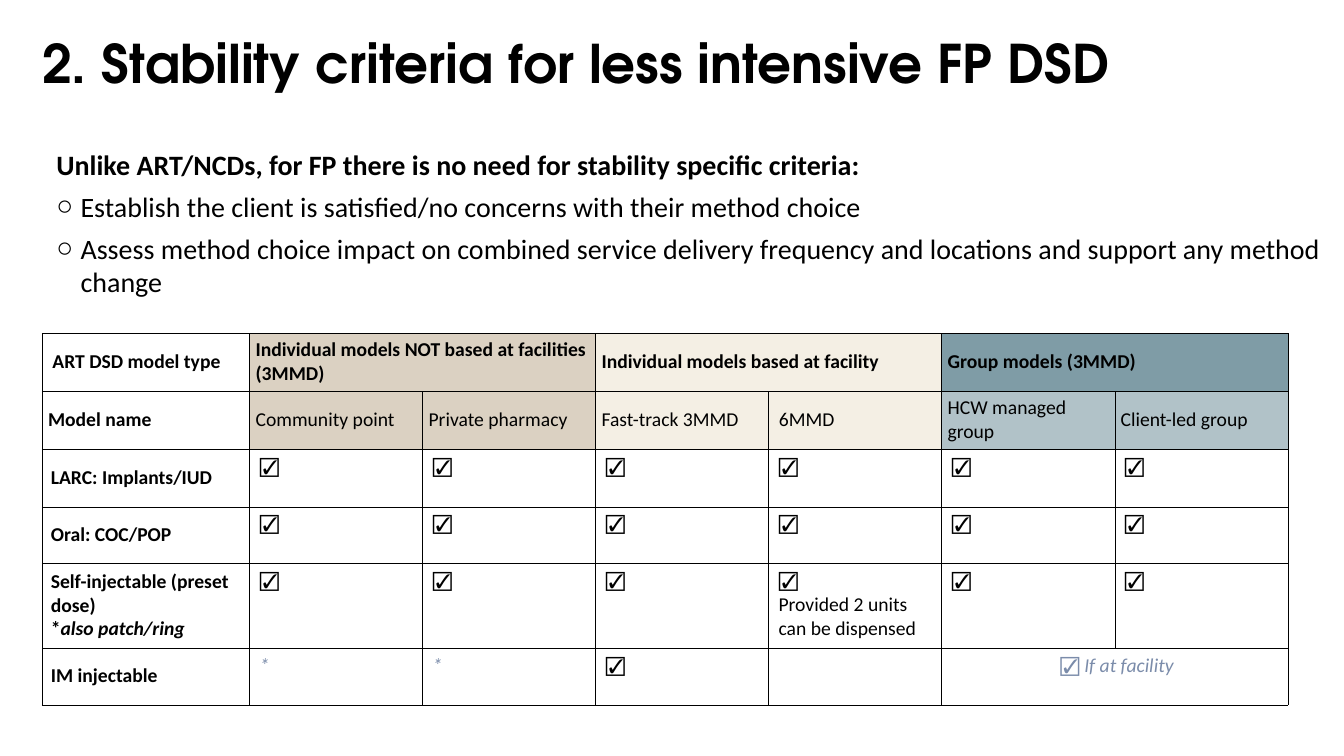
import dataclasses
import typing

import lxml.etree
import pptx
import pptx.dml.color
import pptx.enum.text
import pptx.oxml.ns
import pptx.util

Cm = pptx.util.Cm
Pt = pptx.util.Pt
ALIGN = pptx.enum.text.PP_ALIGN
ANCHOR = pptx.enum.text.MSO_ANCHOR

BLACK, WHITE, MUTED = "000000", "FFFFFF", "7B8CAA"
SAND, CREAM, TEAL, PALE_TEAL = "DBD1C2", "F4EFE4", "7F9CA6", "B1C2C8"
COLUMN_WIDTHS = [5.23] + [4.36] * 6
ROW_HEIGHTS = [1.46, 1.46, 1.46, 1.42, 2.14, 1.42]


@dataclasses.dataclass(frozen=True)
class Span:
    text: str
    bold: bool = False
    italic: bool = False
    color: str = BLACK
    size: float = 14
    font: str = "Calibri"


@dataclasses.dataclass(frozen=True)
class Entry:
    lines: tuple[tuple[Span, ...], ...] = ()
    fill: str = WHITE
    columns: int = 1
    left: float = 0.25
    top: float = 0.13
    anchor: typing.Any = ANCHOR.TOP
    align: typing.Any = ALIGN.LEFT


def rgb(color: str) -> pptx.dml.color.RGBColor:
    return pptx.dml.color.RGBColor.from_string(color)


def apply(target: typing.Any, values: dict[str, typing.Any]) -> None:
    for name, value in values.items():
        setattr(target, name, value)


def add_span(para: typing.Any, span: Span) -> None:
    run = para.add_run()
    run.text = span.text
    apply(run.font, {"name": span.font, "size": Pt(span.size),
                     "bold": span.bold, "italic": span.italic})
    run.font.color.rgb = rgb(span.color)


def add_lines(frame: typing.Any, lines: typing.Sequence[typing.Sequence[Span]],
              values: dict[str, typing.Any]) -> None:
    for index, line in enumerate(lines):
        para = frame.add_paragraph() if index else frame.paragraphs[0]
        apply(para, values)
        for span in line:
            add_span(para, span)


def place(box: typing.Any, left: float, top: float, width: float, height: float) -> None:
    apply(box, {"left": Cm(left), "top": Cm(top), "width": Cm(width), "height": Cm(height)})
    apply(box.text_frame, {"margin_left": 0, "margin_top": 0, "margin_right": 0,
                           "margin_bottom": 0, "word_wrap": True,
                           "vertical_anchor": ANCHOR.TOP,
                           "auto_size": pptx.enum.text.MSO_AUTO_SIZE.NONE})


def add_element(parent: typing.Any, tag: str, **attributes: str) -> typing.Any:
    return lxml.etree.SubElement(parent, pptx.oxml.ns.qn(tag), attributes)


def set_bullet(para: typing.Any, char: str, indent: float) -> None:
    properties = para._p.get_or_add_pPr()
    properties.set("marL", str(Cm(indent)))
    properties.set("indent", str(-Cm(indent)))
    if char:
        add_element(properties, "a:buChar", char=char)
    else:
        add_element(properties, "a:buNone")


def set_borders(cell: typing.Any) -> None:
    properties = cell._tc.get_or_add_tcPr()
    for side in ("a:lnL", "a:lnR", "a:lnT", "a:lnB"):
        line = add_element(properties, side, w=str(Pt(0.25)))
        add_element(add_element(line, "a:solidFill"), "a:srgbClr", val=BLACK)


def heading(text: str, fill: str = WHITE, columns: int = 1,
            bold: bool = True, left: float = 0.15) -> Entry:
    return Entry(((Span(text, bold),),), fill, columns, left, 0.1, ANCHOR.MIDDLE)


def method(*lines: tuple[Span, ...]) -> Entry:
    return Entry(lines, left=0.22, top=0.1, anchor=ANCHOR.MIDDLE)


def model(text: str, fill: str, left: float = 0.15) -> Entry:
    return heading(text, fill, bold=False, left=left)


CHECK = Entry(((Span("☑"),),))
CHECK_WITH_NOTE = Entry(CHECK.lines + ((Span("Provided 2 units can be dispensed"),),))
STAR = Entry(((Span("*", italic=True, color=MUTED),),))
AT_FACILITY = Entry(((Span("☑ ", color=MUTED),
                      Span("If at facility", italic=True, color=MUTED)),),
                    columns=2, align=ALIGN.CENTER)

ROWS = [
    [heading("ART DSD model type", left=0.26),
     heading("Individual models NOT based at facilities (3MMD)", SAND, 2),
     heading("Individual models based at facility", CREAM, 2),
     heading("Group models (3MMD)", TEAL, 2)],
    [heading("Model name"),
     model("Community point", SAND), model("Private pharmacy", SAND),
     model("Fast-track 3MMD", CREAM), model("6MMD", CREAM, 0.26),
     model("HCW managed group", PALE_TEAL), model("Client-led group", PALE_TEAL)],
    [method((Span("LARC: Implants/IUD", True),))] + [CHECK] * 6,
    [method((Span("Oral: COC/POP", True),))] + [CHECK] * 6,
    [method((Span("Self-injectable (preset dose)", True),),
            (Span("*", True), Span("also patch/ring", True, True)))]
    + [CHECK] * 3 + [CHECK_WITH_NOTE] + [CHECK] * 2,
    [method((Span("IM injectable", True),)), STAR, STAR, CHECK, Entry(), AT_FACILITY],
]


def fill_cell(cell: typing.Any, entry: Entry) -> None:
    apply(cell, {"margin_left": Cm(entry.left), "margin_right": Cm(entry.top),
                 "margin_top": Cm(entry.top), "margin_bottom": Cm(0.13),
                 "vertical_anchor": entry.anchor})
    cell.fill.solid()
    cell.fill.fore_color.rgb = rgb(entry.fill)
    add_lines(cell.text_frame, entry.lines, {"alignment": entry.align})


def add_criteria_table(page: typing.Any) -> None:
    table = page.shapes.add_table(len(ROW_HEIGHTS), len(COLUMN_WIDTHS), Cm(1.06), Cm(8.4),
                                  Cm(sum(COLUMN_WIDTHS)), Cm(sum(ROW_HEIGHTS))).table
    apply(table, {"first_row": False, "horz_banding": False})
    for column, width in zip(table.columns, COLUMN_WIDTHS):
        column.width = Cm(width)
    for row, height in zip(table.rows, ROW_HEIGHTS):
        row.height = Cm(height)
    for cell in table.iter_cells():
        set_borders(cell)
    for row_index, entries in enumerate(ROWS):
        column_index = 0
        for entry in entries:
            cell = table.cell(row_index, column_index)
            column_index += entry.columns
            if entry.columns > 1:
                cell.merge(table.cell(row_index, column_index - 1))
            fill_cell(cell, entry)


def main() -> None:
    deck = pptx.Presentation()
    apply(deck, {"slide_width": Cm(33.87), "slide_height": Cm(19.05)})
    page = deck.slides.add_slide(deck.slide_layouts[1])

    title = page.shapes.title
    place(title, 1.06, 0.94, 32.08, 2.11)
    add_lines(title.text_frame,
              [[Span("2. Stability criteria for less intensive FP DSD", True,
                     size=38, font="TeX Gyre Adventor")]],
              {"alignment": ALIGN.LEFT, "line_spacing": 0.9})

    body = page.placeholders[1]
    place(body, 1.42, 3.71, 32.08, 7.59)
    add_lines(body.text_frame, [
        [Span("Unlike ART/NCDs, for FP there is no need for stability specific criteria:",
              True, size=20)],
        [Span("Establish the client is satisfied/no concerns with their method choice", size=20)],
        [Span("Assess method choice impact on combined service delivery frequency and "
              "locations and support any method change", size=20)],
    ], {"alignment": ALIGN.LEFT, "space_before": Pt(0), "space_after": Pt(6)})
    for index, para in enumerate(body.text_frame.paragraphs):
        set_bullet(para, "○" if index else "", 0.61 if index else 0)

    add_criteria_table(page)
    deck.save("out.pptx")


if __name__ == "__main__":
    main()
